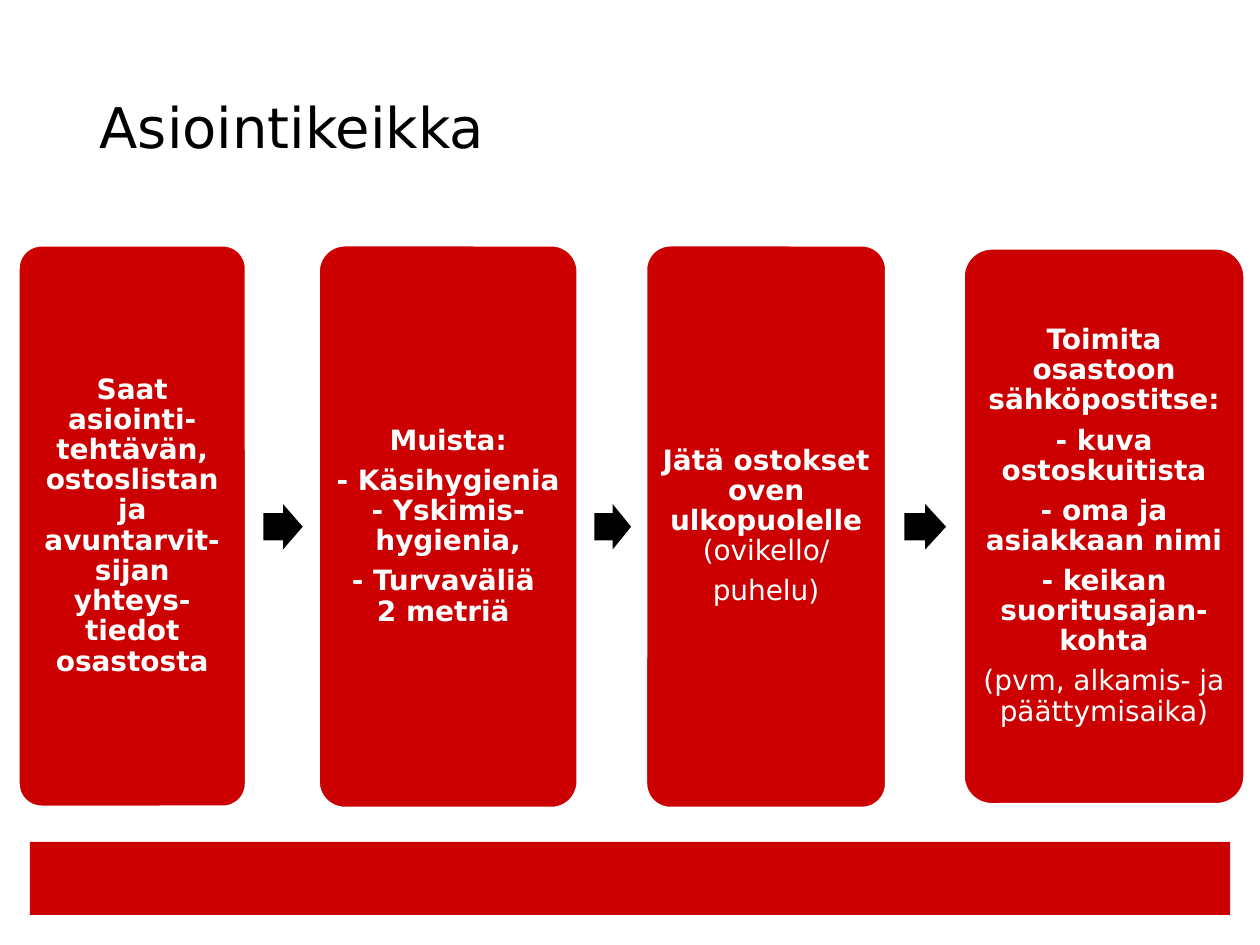
from pptx import Presentation
from pptx.dml.color import RGBColor
from pptx.enum.shapes import MSO_SHAPE as Shape
from pptx.enum.text import MSO_ANCHOR as Anchor, PP_ALIGN as Align
from pptx.util import Pt

COLORS = {"red": "CC0000", "black": "000000", "white": "FFFFFF"}
FONT = "DejaVu Sans"
TITLE = "Asiointikeikka"

# Each step: left, top, width, height, paragraphs as (bold text, plain text)
STEPS = [
    (10.8, 140.4, 129.6, 320.4, [
        ("Saat asiointi-tehtävän, ostoslistan ja avuntarvit-sijan "
         "yhteys-tiedot osastosta", ""),
    ]),
    (182.3, 140.4, 147.6, 321.1, [
        ("Muista:", ""),
        ("- Käsihygienia - Yskimis-hygienia,", ""),
        ("- Turvaväliä \v2 metriä ", ""),
    ]),
    (369.4, 140.4, 136.8, 321.1, [
        ("Jätä ostokset oven ulkopuolelle ", "(ovikello/"),
        ("", "puhelu)"),
    ]),
    (550.8, 142.2, 160.2, 317.2, [
        ("Toimita osastoon sähköpostitse:", ""),
        ("- kuva ostoskuitista", ""),
        ("- oma ja asiakkaan nimi", ""),
        ("- keikan suoritusajan-kohta", ""),
        ("", "(pvm, alkamis- ja päättymisaika)"),
    ]),
]
ARROWS = [(150.5, 22.5), (339.6, 21), (516.8, 23.8)]
ARROW_TOP, ARROW_HEIGHT = 288, 26


def color(name):
    return RGBColor.from_string(COLORS[name])


def add_block(slide, kind, left, top, width, height, fill):
    shape = slide.shapes.add_shape(kind, Pt(left), Pt(top), Pt(width), Pt(height))
    shape.shadow.inherit = False
    shape.fill.solid()
    shape.fill.fore_color.rgb = color(fill)
    shape.line.fill.background()
    return shape


def format_paragraph(paragraph, size, font_color, alignment):
    paragraph.alignment = alignment
    paragraph.line_spacing = 0.9
    paragraph.font.name = FONT
    paragraph.font.size = Pt(size)
    paragraph.font.color.rgb = color(font_color)


def add_step(slide, left, top, width, height, paragraphs):
    shape = add_block(slide, Shape.ROUNDED_RECTANGLE, left, top, width, height, "red")
    shape.adjustments[0] = 0.1
    shape.line.color.rgb = color("white")
    shape.line.width = Pt(1)
    frame = shape.text_frame
    frame.word_wrap = True
    frame.vertical_anchor = Anchor.MIDDLE
    frame.margin_left = frame.margin_right = Pt(5)
    frame.margin_top = frame.margin_bottom = Pt(5)
    for index, (bold_text, plain_text) in enumerate(paragraphs):
        paragraph = frame.add_paragraph() if index else frame.paragraphs[0]
        paragraph.text = bold_text
        for run in paragraph.runs:
            run.font.bold = True
        if plain_text:
            paragraph.add_run().text = plain_text
        format_paragraph(paragraph, 16, "white", Align.CENTER)
        paragraph.space_after = Pt(5.6)


def main():
    presentation = Presentation()
    presentation.slide_width, presentation.slide_height = Pt(720), Pt(540)
    slide = presentation.slides.add_slide(presentation.slide_layouts[5])

    title = slide.shapes.title
    title.left, title.top, title.width, title.height = Pt(49.7), Pt(22.3), Pt(494.6), Pt(104.4)
    title.text_frame.text = TITLE
    title.text_frame.vertical_anchor = Anchor.MIDDLE
    format_paragraph(title.text_frame.paragraphs[0], 32, "black", Align.LEFT)

    add_block(slide, Shape.RECTANGLE, 17, 481, 686, 41.8, "red")
    for step in STEPS:
        add_step(slide, *step)
    for left, width in ARROWS:
        arrow = add_block(slide, Shape.RIGHT_ARROW, left, ARROW_TOP, width, ARROW_HEIGHT, "black")
        arrow.adjustments[0] = 0.6
        arrow.adjustments[1] = 0.5

    presentation.save("out.pptx")


if __name__ == "__main__":
    main()
